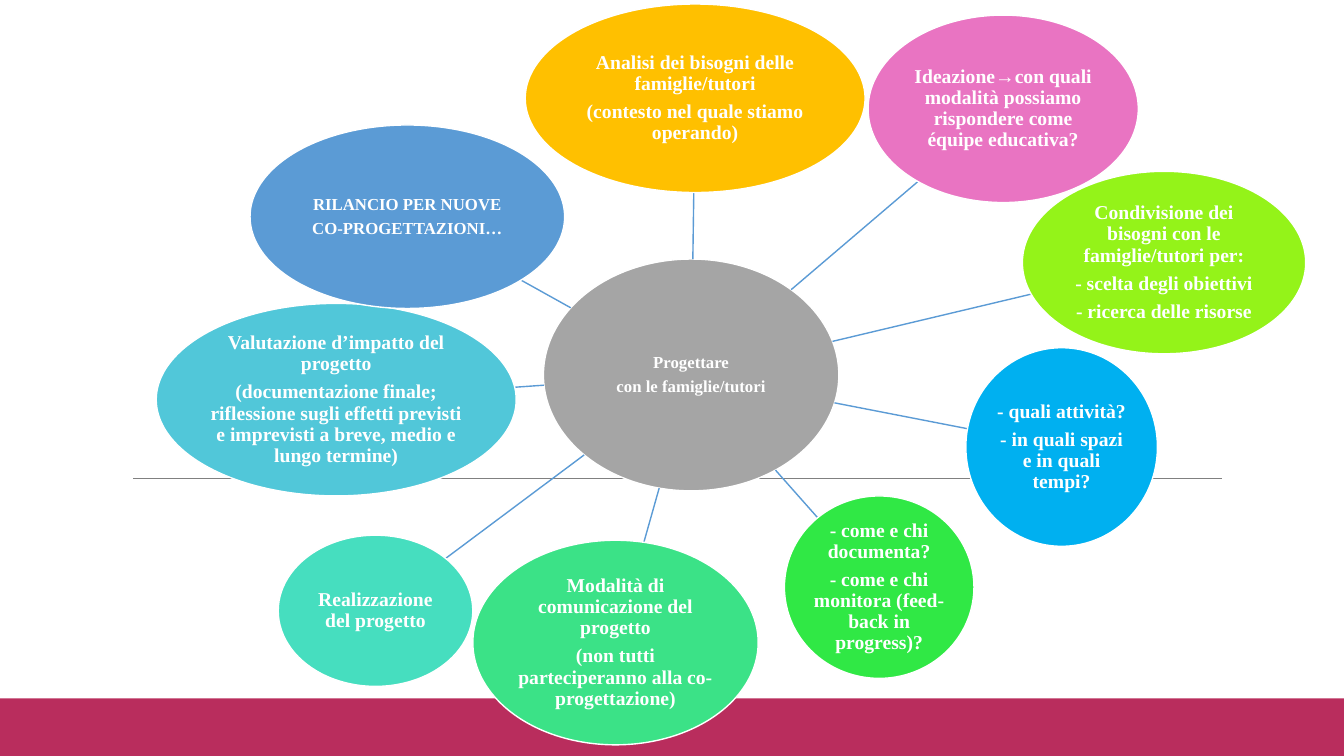
import math

import pptx
import pptx.dml.color
import pptx.enum.shapes
import pptx.enum.text
import pptx.oxml.ns
import pptx.util
from lxml import etree

RGBColor = pptx.dml.color.RGBColor
Inches = pptx.util.Inches
Pt = pptx.util.Pt
MSO_SHAPE = pptx.enum.shapes.MSO_SHAPE

WHITE = RGBColor(0xFF, 0xFF, 0xFF)
CRIMSON = RGBColor(0xB9, 0x2D, 0x5D)
RULE_GRAY = RGBColor(0x80, 0x80, 0x80)
HUB_GRAY = RGBColor(0xA5, 0xA5, 0xA5)
BLUE = RGBColor(0x5B, 0x9B, 0xD5)
AMBER = RGBColor(0xFF, 0xC0, 0x00)
PINK = RGBColor(0xE9, 0x74, 0xC2)
LIME = RGBColor(0x94, 0xF3, 0x19)
SKY = RGBColor(0x00, 0xB0, 0xF0)
GREEN = RGBColor(0x30, 0xE8, 0x45)
EMERALD = RGBColor(0x3B, 0xE2, 0x87)
TURQUOISE = RGBColor(0x46, 0xDE, 0xBF)
TEAL = RGBColor(0x51, 0xC7, 0xD9)

SLIDE_WIDTH, SLIDE_HEIGHT = 13.33, 7.5
FONT = "Times New Roman"

HUB_BOX = (5.39, 2.57, 2.93, 2.3)
HUB_TEXT = ["Progettare", "con le famiglie/tutori"]

STEPS = [
    ((5.21, 0.04, 3.37, 1.87), AMBER, 14,
     ["Analisi dei bisogni delle famiglie/tutori",
      "(contesto nel quale stiamo operando)"]),
    ((8.61, 0.15, 2.68, 1.86), PINK, 14,
     ["Ideazione→con quali modalità possiamo rispondere come équipe educativa?"]),
    ((10.14, 1.7, 2.81, 1.81), LIME, 14,
     ["Condivisione dei bisogni con le famiglie/tutori per:",
      "- scelta degli obiettivi",
      "- ricerca delle risorse"]),
    ((9.58, 3.45, 1.9, 1.97), SKY, 14,
     ["- quali attività?", "- in quali spazi e in quali tempi?"]),
    ((7.78, 4.92, 1.88, 1.81), GREEN, 14,
     ["- come e chi documenta?",
      "- come e chi monitora (feed-back in progress)?"]),
    ((4.69, 5.36, 2.83, 2.03), EMERALD, 14,
     ["Modalità di comunicazione del progetto",
      "(non tutti parteciperanno alla co-progettazione)"]),
    ((2.76, 5.31, 1.93, 1.5), TURQUOISE, 14,
     ["Realizzazione del progetto"]),
    ((1.55, 3.01, 3.57, 1.91), TEAL, 14,
     ["Valutazione d’impatto del progetto",
      "(documentazione finale; riflessione sugli effetti previsti e imprevisti "
      "a breve, medio e lungo termine)"]),
    ((2.48, 1.24, 3.12, 1.82), BLUE, 12,
     ["RILANCIO PER NUOVE", "CO-PROGETTAZIONI…"]),
]


def add_line(slide, start, end, color, width):
    connector = slide.shapes.add_connector(
        pptx.enum.shapes.MSO_CONNECTOR.STRAIGHT,
        *(Inches(value) for value in (*start, *end)))
    connector.line.color.rgb = color
    connector.line.width = Pt(width)
    etree.SubElement(connector._element.spPr, pptx.oxml.ns.qn("a:effectLst"))


def add_filled_shape(slide, kind, box, fill):
    shape = slide.shapes.add_shape(kind, *(Inches(value) for value in box))
    shape.shadow.inherit = False
    shape.fill.solid()
    shape.fill.fore_color.rgb = fill
    shape.line.fill.background()
    return shape


def write_text(shape, lines, size=14, color=WHITE, bold=True):
    frame = shape.text_frame
    frame.word_wrap = True
    frame.vertical_anchor = pptx.enum.text.MSO_ANCHOR.MIDDLE
    frame.margin_left = frame.margin_right = Inches(0.01)
    frame.margin_top = frame.margin_bottom = Inches(0.01)
    for index, line in enumerate(lines):
        paragraph = frame.add_paragraph() if index else frame.paragraphs[0]
        paragraph.alignment = pptx.enum.text.PP_ALIGN.CENTER
        paragraph.line_spacing = 0.9
        paragraph.space_after = Pt(0.35 * size)
        run = paragraph.add_run()
        run.text = line
        run.font.name = FONT
        run.font.size = Pt(size)
        run.font.bold = bold
        run.font.color.rgb = color


def add_bubble(slide, box, fill, size, lines):
    bubble = add_filled_shape(slide, MSO_SHAPE.OVAL, box, fill)
    bubble.line.color.rgb = WHITE
    bubble.line.width = Pt(1)
    write_text(bubble, lines, size=size)


def center_of(box):
    left, top, width, height = box
    return left + width / 2, top + height / 2


def edge_toward(box, target):
    x, y = center_of(box)
    dx, dy = target[0] - x, target[1] - y
    share = 1 / math.hypot(dx / (box[2] / 2), dy / (box[3] / 2))
    return x + dx * share, y + dy * share


def add_backdrop(slide, width, height):
    band_top = 0.924 * height
    add_filled_shape(slide, MSO_SHAPE.RECTANGLE,
                     (0, band_top, width, height - band_top), CRIMSON)
    add_line(slide, (1.32, 4.75), (12.12, 4.75), RULE_GRAY, 0.5)


def add_radial_map(slide, hub_box, steps):
    add_bubble(slide, hub_box, HUB_GRAY, 12, HUB_TEXT)
    for box, fill, size, lines in steps:
        add_line(slide, edge_toward(hub_box, center_of(box)),
                 edge_toward(box, center_of(hub_box)), BLUE, 1)
        add_bubble(slide, box, fill, size, lines)


def main():
    presentation = pptx.Presentation()
    presentation.slide_width = Inches(SLIDE_WIDTH)
    presentation.slide_height = Inches(SLIDE_HEIGHT)
    slide = presentation.slides.add_slide(presentation.slide_layouts[6])
    add_backdrop(slide, SLIDE_WIDTH, SLIDE_HEIGHT)
    add_radial_map(slide, HUB_BOX, STEPS)
    presentation.save("out.pptx")


if __name__ == "__main__":
    main()
